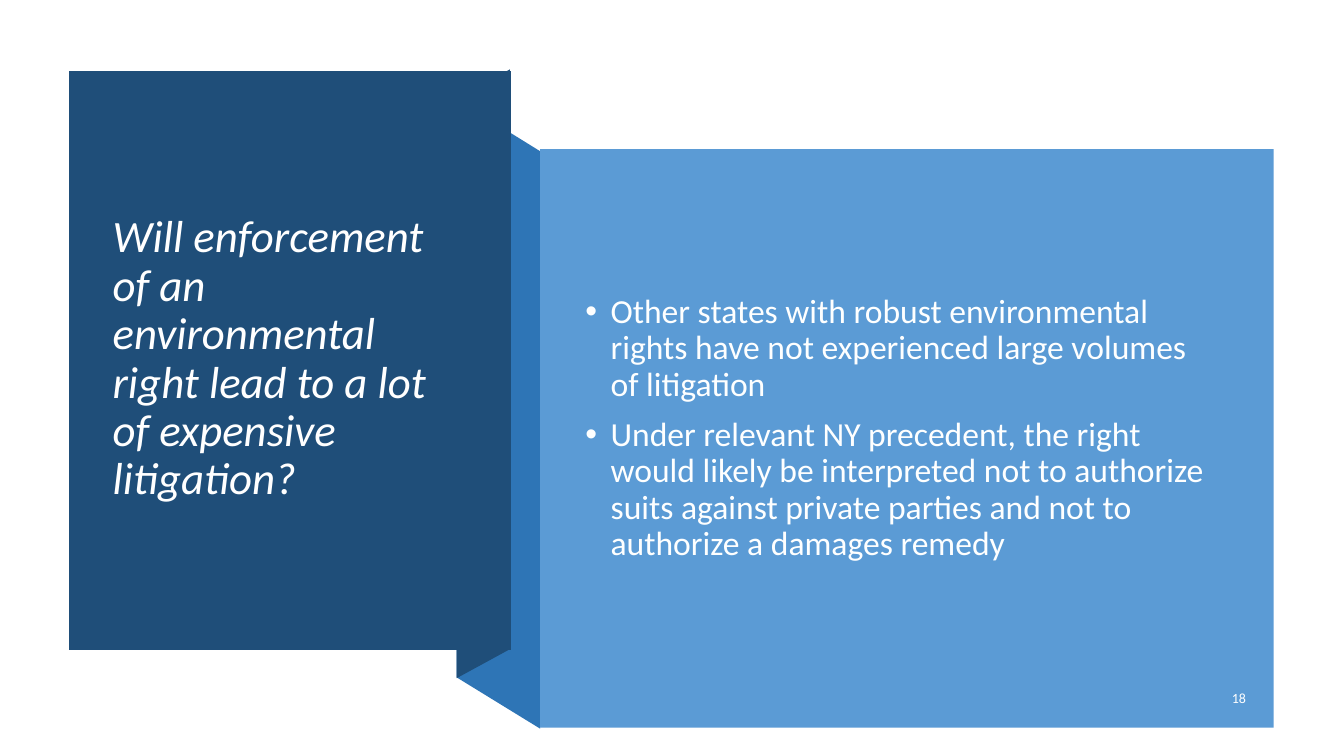
from pptx import Presentation
from pptx.dml.color import RGBColor
from pptx.enum.shapes import MSO_SHAPE
from pptx.enum.text import MSO_ANCHOR, PP_ALIGN
from pptx.oxml.ns import qn
from pptx.util import Cm, Pt
from lxml.etree import SubElement

COLORS = {
    "navy": "1F4E79",
    "blue": "2E75B6",
    "sky": "5B9BD5",
    "white": "FFFFFF",
    "soft_white": "FEFFFF",
}


def paint(shape, color):
    shape.shadow.inherit = False
    shape.fill.solid()
    shape.fill.fore_color.rgb = RGBColor.from_string(COLORS[color])
    shape.line.fill.background()


def add_text(box, lines, size, color, italic=False):
    frame = slide.shapes.add_textbox(*[Cm(length) for length in box]).text_frame
    frame.word_wrap = True
    frame.vertical_anchor = MSO_ANCHOR.MIDDLE
    frame.text = "\n".join(lines)
    for paragraph in frame.paragraphs:
        font = paragraph.runs[0].font
        font.name = "Calibri"
        font.size = Pt(size)
        font.italic = italic
        font.color.rgb = RGBColor.from_string(COLORS[color])
    return frame.paragraphs


deck = Presentation()
deck.slide_width = Cm(33.87)
deck.slide_height = Cm(19.05)
slide = deck.slides.add_slide(deck.slide_layouts[6])

ribbon = [
    ("blue", [(13.61, 18.36), (11.51, 17.07), (11.51, 2.51), (13.61, 3.81)]),
    ("navy", [(12.85, 16.36), (11.51, 17.09), (11.51, 2.49), (12.85, 1.75)]),
    ("navy", [(1.75, 1.78), (12.88, 1.78), (12.88, 16.38), (1.75, 16.38)]),
]
for color, corners in ribbon:
    points = [(Cm(x), Cm(y)) for x, y in corners]
    outline = slide.shapes.build_freeform(*points[0])
    outline.add_line_segments(points[1:], close=True)
    paint(outline.convert_to_shape(), color)

question = add_text(
    (2.59, 2.72, 9.42, 12.67),
    ["Will enforcement of an environmental right lead to a lot of expensive litigation?"],
    32, "white", italic=True,
)
question[0].line_spacing = 0.9

answer_panel = slide.shapes.add_shape(
    MSO_SHAPE.RECTANGLE, Cm(13.61), Cm(3.76), Cm(18.49), Cm(14.58)
)
paint(answer_panel, "sky")

answers = add_text(
    (14.5, 4.78, 16.54, 12.04),
    [
        "Other states with robust environmental rights have not experienced "
        "large volumes of litigation",
        "Under relevant NY precedent, the right would likely be interpreted not to "
        "authorize suits against private parties and not to authorize a damages remedy",
    ],
    24, "soft_white",
)
for answer in answers:
    answer.line_spacing = 0.9
    answer.space_before = Pt(10)
    properties = answer._p.get_or_add_pPr()
    properties.set("marL", str(Cm(0.64)))
    properties.set("indent", str(-Cm(0.64)))
    SubElement(properties, qn("a:buFont"), typeface="Arial")
    SubElement(properties, qn("a:buChar"), char="•")

page_number = add_text((29.74, 17.15, 1.91, 0.89), ["18"], 10, "white")
page_number[0].alignment = PP_ALIGN.RIGHT
page_number[0].space_after = Pt(6)

deck.save("out.pptx")
